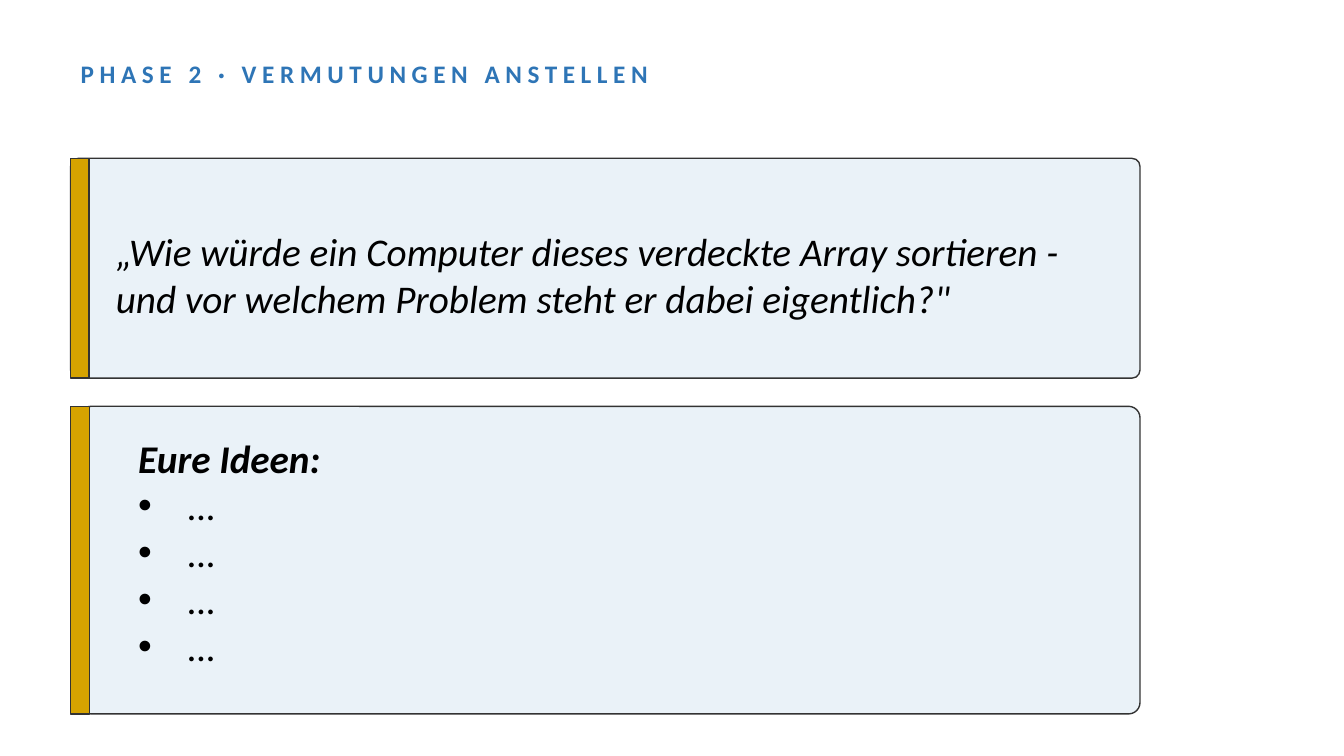
import pptx
import pptx.dml.color
import pptx.enum.shapes
import pptx.enum.text
import pptx.oxml.ns
import pptx.util
from lxml import etree
from pptx.util import Cm, Pt

SHAPES = pptx.enum.shapes.MSO_SHAPE
LEFT = 1.78
CARD_RIGHT = 28.73


def color(hex_value):
    return pptx.dml.color.RGBColor.from_string(hex_value)


def apply_format(target, values):
    for name, value in values.items():
        setattr(target, name, value)


class PhaseSlide:
    font_name = "Calibri"
    card_fill, accent, outline = "EAF2F8", "D6A300", "333333"
    ink, heading_ink = "000000", "2E75B6"

    def __init__(self, deck):
        self.slide = deck.slides.add_slide(deck.slide_layouts[5])

    def format_font(self, font, ink, **values):
        apply_format(font, {"name": self.font_name, **values})
        font.color.rgb = color(ink)

    def format_frame(self, frame):
        apply_format(frame, {
            "word_wrap": True,
            "auto_size": pptx.enum.text.MSO_AUTO_SIZE.NONE,
            "vertical_anchor": pptx.enum.text.MSO_ANCHOR.MIDDLE,
        })

    def heading(self, text, left, top, width, height):
        title = self.slide.shapes.title
        apply_format(title, {"left": Cm(left), "top": Cm(top),
                             "width": Cm(width), "height": Cm(height)})
        self.format_frame(title.text_frame)
        paragraph = title.text_frame.paragraphs[0]
        paragraph.alignment = pptx.enum.text.PP_ALIGN.LEFT
        run = paragraph.add_run()
        run.text = text
        self.format_font(run.font, self.heading_ink, size=Pt(18), bold=True)
        run.font._element.set("spc", "400")

    def panel(self, preset, fill, left, top, width, height):
        shape = self.slide.shapes.add_shape(
            preset, Cm(left), Cm(top), Cm(width), Cm(height))
        shape.shadow.inherit = False
        shape.fill.solid()
        shape.fill.fore_color.rgb = color(fill)
        shape.line.color.rgb = color(self.outline)
        shape.line.width = Pt(1)
        return shape

    def card(self, left, top, height, bar_width):
        """Draw a rounded card with an accent bar on the left margin."""
        body = self.panel(SHAPES.ROUNDED_RECTANGLE, self.card_fill,
                          left, top, CARD_RIGHT - left, height)
        body.adjustments[0] = 0.037
        self.panel(SHAPES.RECTANGLE, self.accent, LEFT, top, bar_width, height)

    def bullet(self, paragraph):
        properties = paragraph._p.get_or_add_pPr()
        indent = Cm(1.27)
        properties.set("marL", str(indent))
        properties.set("indent", str(-indent))
        for tag, key, value in (("a:buFont", "typeface", "Arial"),
                                ("a:buChar", "char", "•")):
            etree.SubElement(properties, pptx.oxml.ns.qn(tag)).set(key, value)

    def text(self, left, top, lines):
        """Write lines given as (text, is_bold, is_bullet)."""
        box = self.slide.shapes.add_textbox(Cm(left), Cm(top), Cm(25.07), Cm(4.8))
        frame = box.text_frame
        self.format_frame(frame)
        for index, (words, is_bold, is_bullet) in enumerate(lines):
            paragraph = frame.add_paragraph() if index else frame.paragraphs[0]
            if is_bullet:
                self.bullet(paragraph)
            run = paragraph.add_run()
            run.text = words
            self.format_font(run.font, self.ink, size=Pt(28),
                             bold=is_bold, italic=True)


def main():
    deck = pptx.Presentation()
    apply_format(deck, {"slide_width": Cm(33.87), "slide_height": Cm(19.05)})
    phase = PhaseSlide(deck)
    phase.heading("PHASE 2 · VERMUTUNGEN ANSTELLEN", LEFT, 1.35, 20.32, 1.02)

    question = ("„Wie würde ein Computer dieses verdeckte Array sortieren - "
                "und vor welchem Problem steht er dabei eigentlich?\"")
    phase.card(LEFT, 3.99, 5.54, bar_width=0.46)
    phase.text(2.67, 4.52, [(question, False, False)])

    ideas = [("Eure Ideen:", True, False)] + [("…", False, True)] * 4
    phase.card(2.01, 10.24, 7.75, bar_width=0.48)
    phase.text(3.23, 11.51, ideas)

    deck.save("out.pptx")


if __name__ == "__main__":
    main()
